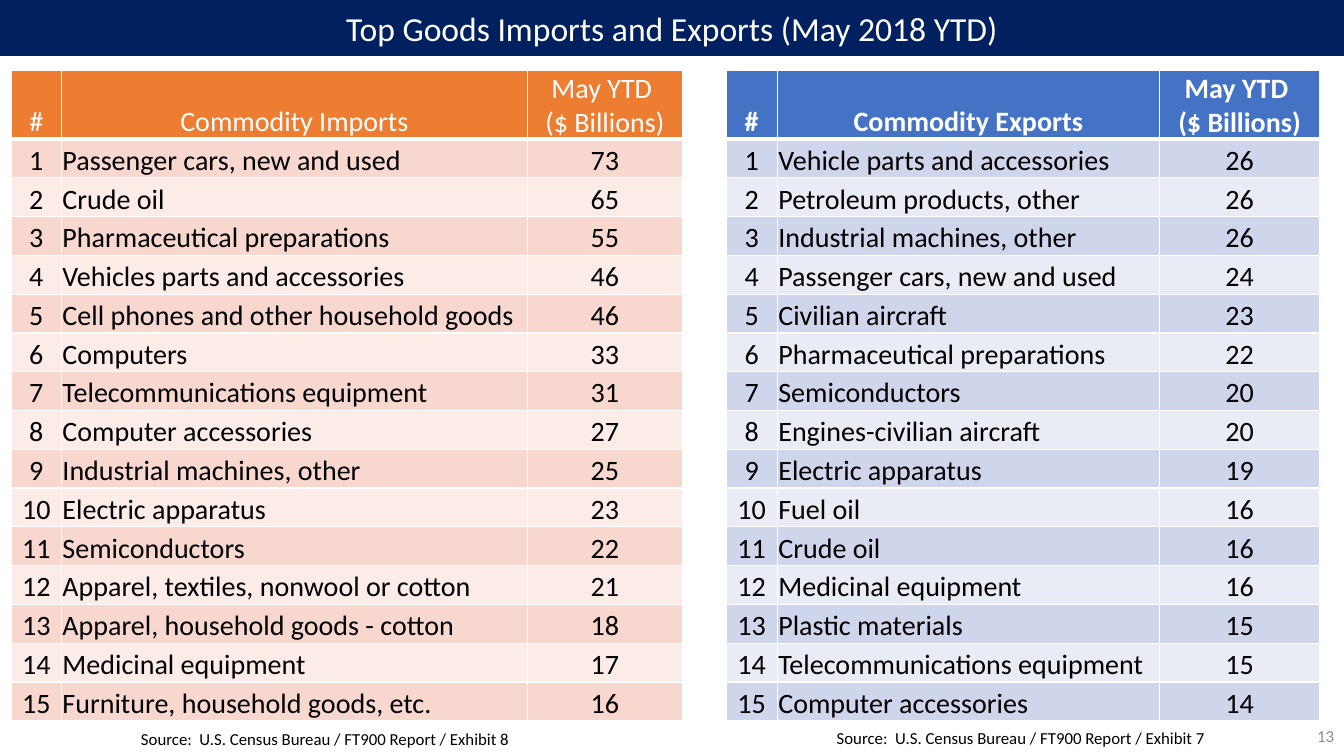
from lxml import etree
from pptx import Presentation
from pptx.dml.color import RGBColor
from pptx.enum.shapes import MSO_SHAPE
from pptx.enum.text import MSO_ANCHOR, MSO_AUTO_SIZE, PP_ALIGN
from pptx.oxml.ns import qn
from pptx.util import Inches, Pt

LEFT, CENTER, RIGHT = PP_ALIGN.LEFT, PP_ALIGN.CENTER, PP_ALIGN.RIGHT
TOP, MIDDLE, BOTTOM = MSO_ANCHOR.TOP, MSO_ANCHOR.MIDDLE, MSO_ANCHOR.BOTTOM
RECT = MSO_SHAPE.RECTANGLE
FIT_SHAPE = MSO_AUTO_SIZE.SHAPE_TO_FIT_TEXT

TITLE = "Top Goods Imports and Exports (May 2018 YTD)"
PAGE_NUMBER = "13"
VALUE_HEADING = "May YTD \n($ Billions)"

IMPORTS = [
    ("Passenger cars, new and used", 73),
    ("Crude oil", 65),
    ("Pharmaceutical preparations", 55),
    ("Vehicles parts and accessories", 46),
    ("Cell phones and other household goods", 46),
    ("Computers", 33),
    ("Telecommunications equipment", 31),
    ("Computer accessories", 27),
    ("Industrial machines, other", 25),
    ("Electric apparatus", 23),
    ("Semiconductors", 22),
    ("Apparel, textiles, nonwool or cotton", 21),
    ("Apparel, household goods - cotton", 18),
    ("Medicinal equipment", 17),
    ("Furniture, household goods, etc.", 16),
]
EXPORTS = [
    ("Vehicle parts and accessories", 26),
    ("Petroleum products, other", 26),
    ("Industrial machines, other", 26),
    ("Passenger cars, new and used", 24),
    ("Civilian aircraft", 23),
    ("Pharmaceutical preparations", 22),
    ("Semiconductors", 20),
    ("Engines-civilian aircraft", 20),
    ("Electric apparatus", 19),
    ("Fuel oil", 16),
    ("Crude oil", 16),
    ("Medicinal equipment", 16),
    ("Plastic materials", 15),
    ("Telecommunications equipment", 15),
    ("Computer accessories", 14),
]

THEME = {
    "font": "Calibri",
    "title_size": 24, "table_size": 20, "note_size": 12,
    "navy": "002060", "white": "FFFFFF", "black": "000000", "gray": "8C8C8C",
    "orange": ("ED7D31", "F8D7CE", "FCECE8"),
    "blue": ("4472C4", "CFD5EA", "E9EBF5"),
}

TABLES = [
    {"heading": "Commodity Exports", "goods": EXPORTS, "left": 7.2,
     "columns": (0.51, 3.79, 1.59), "shades": THEME["blue"], "bold": True},
    {"heading": "Commodity Imports", "goods": IMPORTS, "left": 0.11,
     "columns": (0.5, 4.62, 1.54), "shades": THEME["orange"], "bold": False},
]
SOURCES = [
    ("Source:  U.S. Census Bureau / FT900 Report / Exhibit 7", (8.2, 7.17, 3.9, 0.3)),
    ("Source:  U.S. Census Bureau / FT900 Report / Exhibit 8", (1.3, 7.18, 3.98, 0.3)),
]
TABLE_TOP, TABLE_HEIGHT, HEADER_HEIGHT = 0.7, 6.45, 0.68
CELL_FORMAT = {
    "margin_left": Inches(0.01), "margin_right": Inches(0.01),
    "margin_top": Inches(0.01), "margin_bottom": 0,
    "vertical_anchor": BOTTOM,
}


def rgb(value):
    return RGBColor.from_string(value)


def write(tf, text, size, color, align=LEFT, bold=False):
    """Put each line of text in its own paragraph."""
    for i, line in enumerate(text.split("\n")):
        p = tf.paragraphs[0] if i == 0 else tf.add_paragraph()
        p.alignment = align
        r = p.add_run()
        r.text = line
        for name, value in {"name": THEME["font"], "size": Pt(size), "bold": bold}.items():
            setattr(r.font, name, value)
        r.font.color.rgb = rgb(color)


def add_text(slide, box, text, color, align=LEFT, **frame_format):
    tf = slide.shapes.add_textbox(*map(Inches, box)).text_frame
    for name, value in frame_format.items():
        setattr(tf, name, value)
    write(tf, text, THEME["note_size"], color, align)


def add_title(slide, width):
    sp = slide.shapes.add_shape(RECT, 0, 0, width, Inches(0.55))
    sp.shadow.inherit = False
    sp.fill.solid()
    sp.fill.fore_color.rgb = sp.line.color.rgb = rgb(THEME["navy"])
    sp.line.width = Pt(1)
    sp.text_frame.vertical_anchor = MIDDLE
    write(sp.text_frame, TITLE, THEME["title_size"], THEME["white"], CENTER)


def set_borders(cell, widths):
    """Draw white borders; widths maps each side (L, R, T, B) to points."""
    props = cell._tc.get_or_add_tcPr()
    for side, width in widths.items():
        line = etree.SubElement(props, qn(f"a:ln{side}"), w=str(Pt(width)))
        fill = etree.SubElement(line, qn("a:solidFill"))
        etree.SubElement(fill, qn("a:srgbClr"), val=THEME["white"])


def add_goods_table(slide, heading, goods, left, columns, shades, bold):
    rows = [("#", heading, VALUE_HEADING)]
    rows += [(str(rank), name, str(value)) for rank, (name, value) in enumerate(goods, 1)]
    box = map(Inches, (left, TABLE_TOP, sum(columns), TABLE_HEIGHT))
    table = slide.shapes.add_table(len(rows), len(columns), *box).table
    for column, width in zip(table.columns, columns):
        column.width = Inches(width)
    row_height = (TABLE_HEIGHT - HEADER_HEIGHT) / len(goods)
    header_shade, odd_shade, even_shade = shades

    for r, texts in enumerate(rows):
        header = r == 0
        table.rows[r].height = Inches(HEADER_HEIGHT if header else row_height)
        shade = header_shade if header else odd_shade if r % 2 else even_shade
        color = THEME["white"] if header else THEME["black"]
        borders = {"L": 1, "R": 1, "T": 3 if r == 1 else 1, "B": 3 if header else 1}
        for c, text in enumerate(texts):
            cell = table.cell(r, c)
            for name, value in CELL_FORMAT.items():
                setattr(cell, name, value)
            set_borders(cell, borders)
            cell.fill.solid()
            cell.fill.fore_color.rgb = rgb(shade)
            align = LEFT if c == 1 and not header else CENTER
            write(cell.text_frame, text, THEME["table_size"], color, align, bold and header)


def main():
    prs = Presentation()
    prs.slide_width, prs.slide_height = Inches(13.33), Inches(7.5)
    slide = prs.slides.add_slide(prs.slide_layouts[6])
    add_title(slide, prs.slide_width)
    add_text(slide, (10.33, 7.1, 3, 0.4), PAGE_NUMBER, THEME["gray"], RIGHT,
             vertical_anchor=MIDDLE, word_wrap=True)
    for table in TABLES:
        add_goods_table(slide, **table)
    for text, box in SOURCES:
        add_text(slide, box, text, THEME["black"],
                 vertical_anchor=TOP, word_wrap=False, auto_size=FIT_SHAPE)
    prs.save("out.pptx")


if __name__ == "__main__":
    main()
